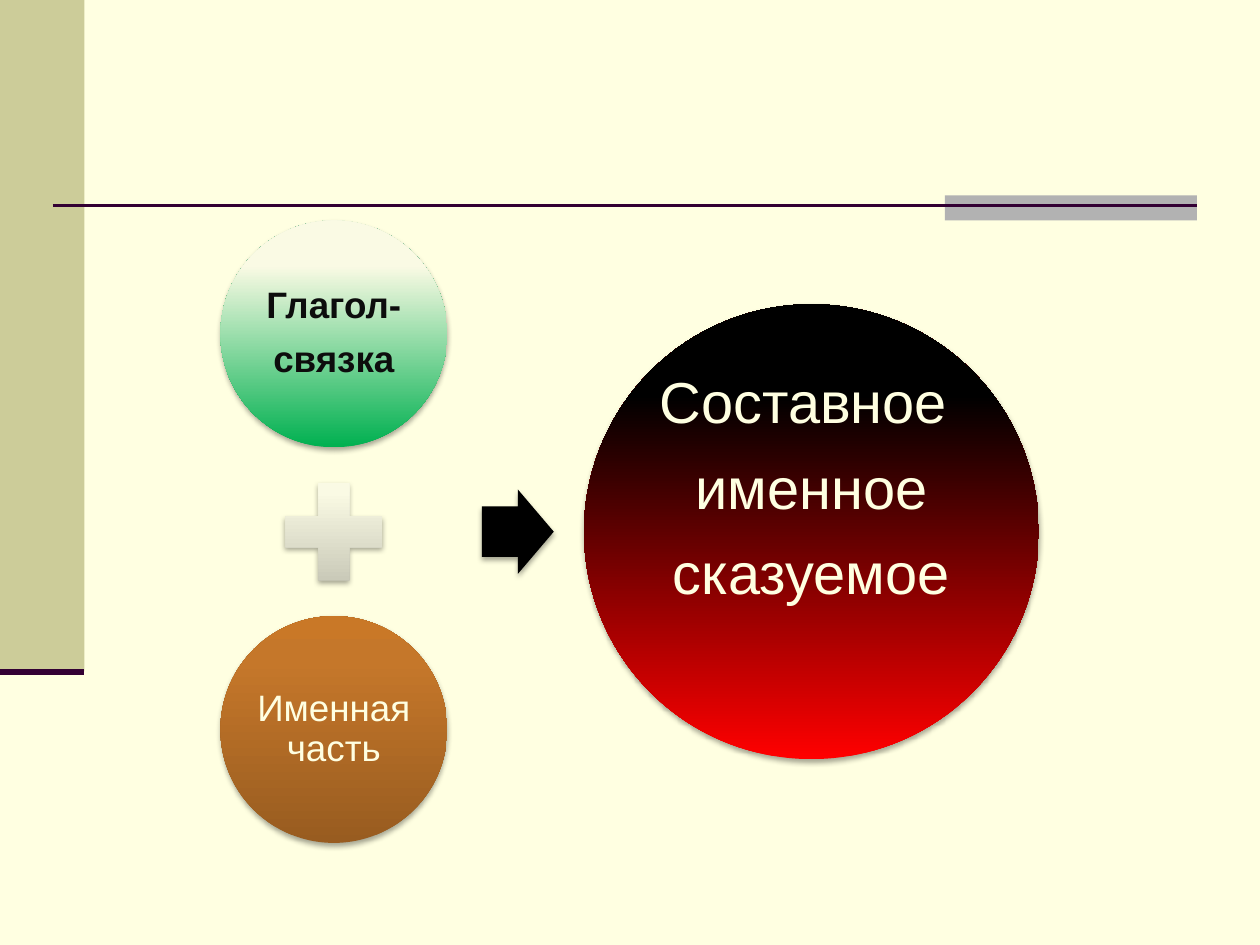
from lxml.etree import SubElement
from pptx import Presentation
from pptx.dml.color import RGBColor
from pptx.enum.shapes import MSO_CONNECTOR, MSO_SHAPE as SHAPE
from pptx.enum.text import MSO_ANCHOR, PP_ALIGN
from pptx.oxml.ns import qn
from pptx.util import Inches, Pt

CREAM = RGBColor(0xFF, 0xFF, 0xE1)
KHAKI = RGBColor(0xCC, 0xCC, 0x99)
GRAY = RGBColor(0xB2, 0xB2, 0xB2)
PLUM = RGBColor(0x33, 0x00, 0x33)
BLACK = RGBColor(0x00, 0x00, 0x00)
INK = RGBColor(0x0D, 0x0D, 0x0D)
IVORY = RGBColor(0xFA, 0xFA, 0xE4)
IVORY_LIGHT = RGBColor(0xFB, 0xFB, 0xE5)

# Gradients run from bottom to top, with stops at 0, 80 and 100 %
STOPS = (0, 80, 100)
GREEN_FADE = (RGBColor(0x00, 0xB0, 0x50), IVORY, IVORY_LIGHT)
STONE_FADE = (RGBColor(0xC0, 0xC0, 0xB0), IVORY, IVORY_LIGHT)
BROWN_FADE = (RGBColor(0x98, 0x5C, 0x20), RGBColor(0xC5, 0x77, 0x2A),
              RGBColor(0xC9, 0x78, 0x27))
RED_FADE = (RGBColor(0xFF, 0x00, 0x00), BLACK, BLACK)

# The equation: a column of terms, an arrow and the result on one axis
AXIS_Y = 4.22
TERMS_X = 2.65
TERM_SIZE = 1.8
TERM_STEP = 1.57
RESULT_X, RESULT_SIZE = 6.44, 3.61


def add_block(slide, kind, left, top, width, height, color=None):
    s = slide.shapes.add_shape(kind, Inches(left), Inches(top),
                               Inches(width), Inches(height))
    s.shadow.inherit = False
    s.line.fill.background()
    if color is not None:
        s.fill.solid()
        s.fill.fore_color.rgb = color
    return s


def add_rule(slide, x1, x2, y, width):
    c = slide.shapes.add_connector(MSO_CONNECTOR.STRAIGHT, Inches(x1),
                                   Inches(y), Inches(x2), Inches(y))
    c.line.color.rgb = PLUM
    c.line.width = Pt(width)
    SubElement(c._element.spPr, qn("a:effectLst"))


def add_color(parent, color):
    return SubElement(parent, qn("a:srgbClr"), val=str(color))


def set_gradient(s, colors):
    s.fill.gradient()
    s.fill.gradient_angle = 90
    stops = s._element.spPr.find(f".//{qn('a:gsLst')}")
    for gs in list(stops):
        stops.remove(gs)
    for pos, color in zip(STOPS, colors):
        add_color(SubElement(stops, qn("a:gs"), pos=str(pos * 1000)), color)


def add_shadow(s):
    effects = s._element.spPr.find(qn("a:effectLst"))
    shadow = SubElement(effects, qn("a:outerShdw"), blurRad=str(Pt(3.1)),
                        dist=str(Pt(1.8)), dir="5400000", rotWithShape="0")
    SubElement(add_color(shadow, BLACK), qn("a:alpha"), val="35000")


def add_part(slide, kind, cx, cy, width, height, fade=None):
    """Shadowed part of the equation, placed by its centre."""
    s = add_block(slide, kind, cx - width / 2, cy - height / 2, width, height,
                  None if fade else BLACK)
    if fade:
        set_gradient(s, fade)
    add_shadow(s)
    return s


def add_text(s, lines, size, color, bold=False, bottom=0):
    tf = s.text_frame
    tf.word_wrap = True
    tf.vertical_anchor = MSO_ANCHOR.MIDDLE
    tf.margin_left = tf.margin_right = tf.margin_top = 0
    tf.margin_bottom = Inches(bottom)
    for i, line in enumerate(lines):
        p = tf.add_paragraph() if i else tf.paragraphs[0]
        p.text = line
        p.alignment = PP_ALIGN.CENTER
        p.line_spacing = 0.9
        p.space_after = Pt(size * 0.4)
        p.font.name = "Arial"
        p.font.size = Pt(size)
        p.font.bold = bold
        p.font.color.rgb = color


def add_frame(slide):
    add_block(slide, SHAPE.RECTANGLE, 0, 0, 0.67, 5.33, KHAKI)
    add_block(slide, SHAPE.RECTANGLE, 7.5, 1.55, 2, 0.2, GRAY)
    add_rule(slide, 0.42, 9.5, 1.63, 1.5)
    add_rule(slide, 0, 0.67, 5.33, 3.5)


def add_equation(slide):
    # Terms
    verb = add_part(slide, SHAPE.OVAL, TERMS_X, AXIS_Y - TERM_STEP,
                    TERM_SIZE, TERM_SIZE, GREEN_FADE)
    add_text(verb, ["Глагол-", "связка"], 21, INK, bold=True)
    add_part(slide, SHAPE.MATH_PLUS, TERMS_X, AXIS_Y, 1.05, 1.05, STONE_FADE)
    noun = add_part(slide, SHAPE.OVAL, TERMS_X, AXIS_Y + TERM_STEP,
                    TERM_SIZE, TERM_SIZE, BROWN_FADE)
    add_text(noun, ["Именная часть"], 21, CREAM)

    # Arrow and result
    arrow = add_part(slide, SHAPE.RIGHT_ARROW, 4.11, AXIS_Y, 0.57, 0.67)
    arrow.adjustments[0] = 0.6
    result = add_part(slide, SHAPE.OVAL, RESULT_X, AXIS_Y,
                      RESULT_SIZE, RESULT_SIZE, RED_FADE)
    add_text(result, ["Составное ", "именное", "сказуемое"], 33, CREAM,
             bottom=0.65)


def main():
    prs = Presentation()
    prs.slide_width, prs.slide_height = Inches(10), Inches(7.5)
    slide = prs.slides.add_slide(prs.slide_layouts[6])
    slide.background.fill.solid()
    slide.background.fill.fore_color.rgb = CREAM
    add_frame(slide)
    add_equation(slide)
    prs.save("out.pptx")


if __name__ == "__main__":
    main()
